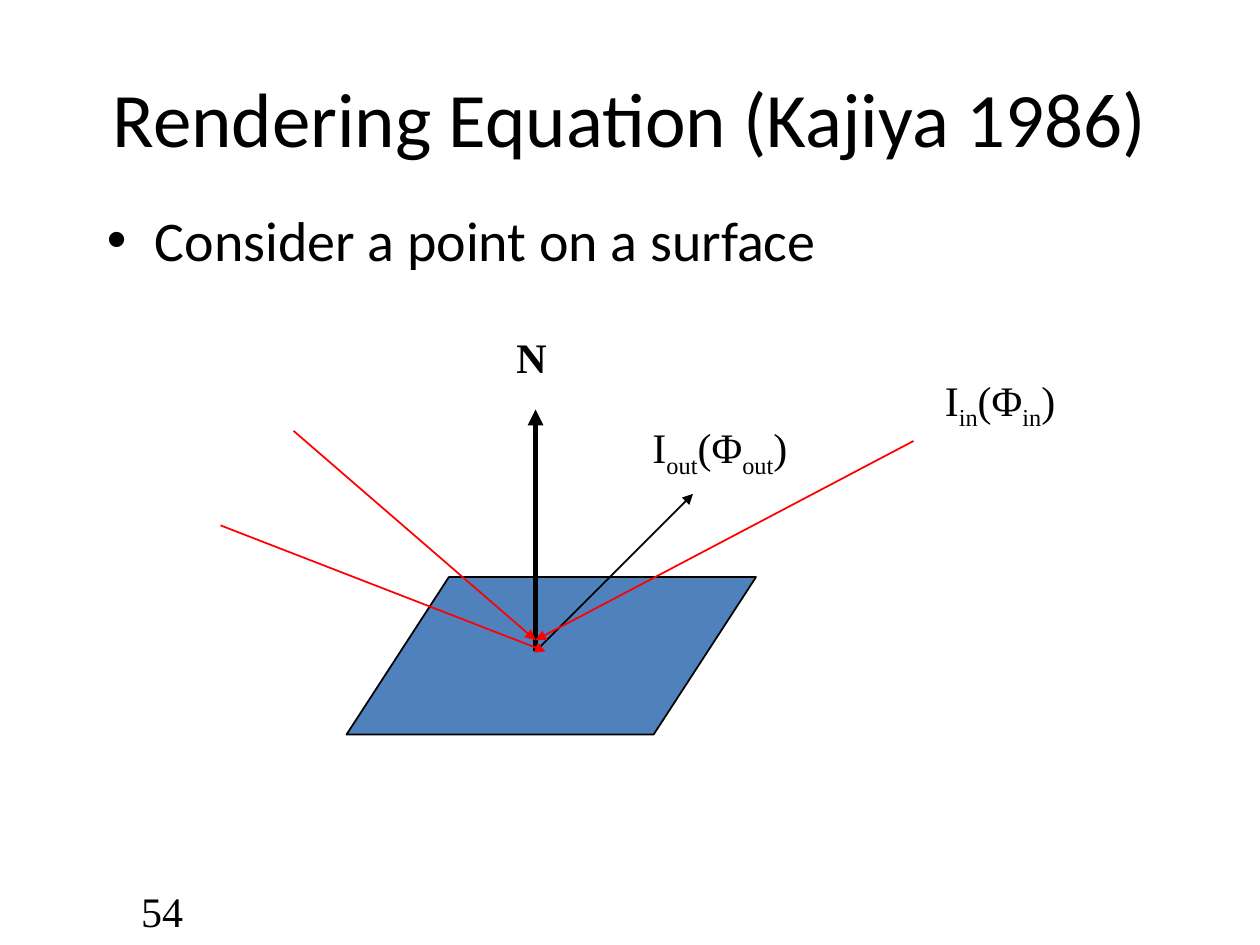
from lxml import etree
from pptx import Presentation
from pptx.dml.color import RGBColor
from pptx.enum.shapes import MSO_CONNECTOR, MSO_SHAPE
from pptx.enum.text import MSO_ANCHOR, MSO_AUTO_SIZE, PP_ALIGN
from pptx.oxml.ns import qn
from pptx.util import Inches, Pt

BLACK = RGBColor(0, 0, 0)
RED = RGBColor(0xFF, 0, 0)
BLUE = RGBColor(0x4F, 0x81, 0xBD)
SERIF = {"name": "Times New Roman", "size": Pt(24)}
SANS = {"name": "Calibri"}

deck = Presentation()
deck.slide_width, deck.slide_height = Inches(10), Inches(7.5)
page = deck.slides.add_slide(deck.slide_layouts[6])


def add_text(place, pieces, font, **frame_format):
    """Add a text box; every second piece is a subscript."""
    box = page.shapes.add_textbox(*map(Inches, place))
    for key, value in {"word_wrap": True, **frame_format}.items():
        setattr(box.text_frame, key, value)
    para = box.text_frame.paragraphs[0]
    for index, piece in enumerate(pieces):
        span = para.add_run()
        span.text = piece
        span.font.color.rgb = BLACK
        for key, value in font.items():
            setattr(span.font, key, value)
        if index % 2:
            span.font._element.set("baseline", "-25000")
    return para


def add_arrow(start, end, color, width):
    arrow = page.shapes.add_connector(
        MSO_CONNECTOR.STRAIGHT, *map(Inches, (*start, *end)))
    arrow.line.color.rgb = color
    arrow.line.width = Pt(width)
    etree.SubElement(arrow.line._get_or_add_ln(), qn("a:tailEnd"), type="triangle")
    etree.SubElement(arrow._element.spPr, qn("a:effectLst"))


# Slide number
number = add_text((0.5, 7.08, 2.33, 0.3), ["54"], SERIF,
                  vertical_anchor=MSO_ANCHOR.MIDDLE, margin_left=Inches(0.12),
                  margin_right=Inches(0.05))
number._p.get_or_add_pPr().set("marL", str(Inches(0.5)))

# Title
title = add_text((0.5, 0.3, 9, 1.25), ["Rendering Equation (Kajiya 1986)"],
                 {**SANS, "size": Pt(44)}, vertical_anchor=MSO_ANCHOR.MIDDLE)
title.alignment = PP_ALIGN.CENTER

# Bullet
bullet = add_text((0.75, 1.58, 8.42, 4.42), ["Consider a point on a surface"],
                  {**SANS, "size": Pt(32)})
properties = bullet._p.get_or_add_pPr()
properties.set("marL", str(Inches(0.38)))
properties.set("indent", str(Inches(-0.38)))
space_before = etree.SubElement(properties, qn("a:spcBef"))
etree.SubElement(space_before, qn("a:spcPct"), val="20000")
etree.SubElement(properties, qn("a:buFont"), typeface="Arial")
etree.SubElement(properties, qn("a:buChar"), char="•")

# Surface
surface = page.shapes.add_shape(
    MSO_SHAPE.PARALLELOGRAM, *map(Inches, (2.75, 4.58, 3.25, 1.25)))
surface.adjustments[0] = 0.65
surface.shadow.inherit = False
surface.fill.solid()
surface.fill.fore_color.rgb = BLUE
surface.line.color.rgb = BLACK
surface.line.width = Pt(1)

# Normal, outgoing ray and incoming rays
for start, end, color, width in [
    ((4.25, 5.17), (4.25, 3.25), BLACK, 3),
    ((4.25, 5.17), (5.5, 3.92), BLACK, 1),
    ((2.33, 3.42), (4.25, 5.08), RED, 1),
    ((1.75, 4.17), (4.33, 5.17), RED, 1),
    ((7.25, 3.5), (4.25, 5.08), RED, 1),
]:
    add_arrow(start, end, color, width)

# Labels
for place, pieces, bold in [
    ((4, 2.58, 0.44, 0.5), ["N"], True),
    ((5.08, 3.3, 1.35, 0.5), ["I", "out", "(Φ", "out", ")"], False),
    ((7.4, 2.92, 1.12, 0.5), ["I", "in", "(Φ", "in", ")"], False),
]:
    add_text(place, pieces, {**SERIF, "bold": bold}, word_wrap=False,
             auto_size=MSO_AUTO_SIZE.SHAPE_TO_FIT_TEXT)

deck.save("out.pptx")
